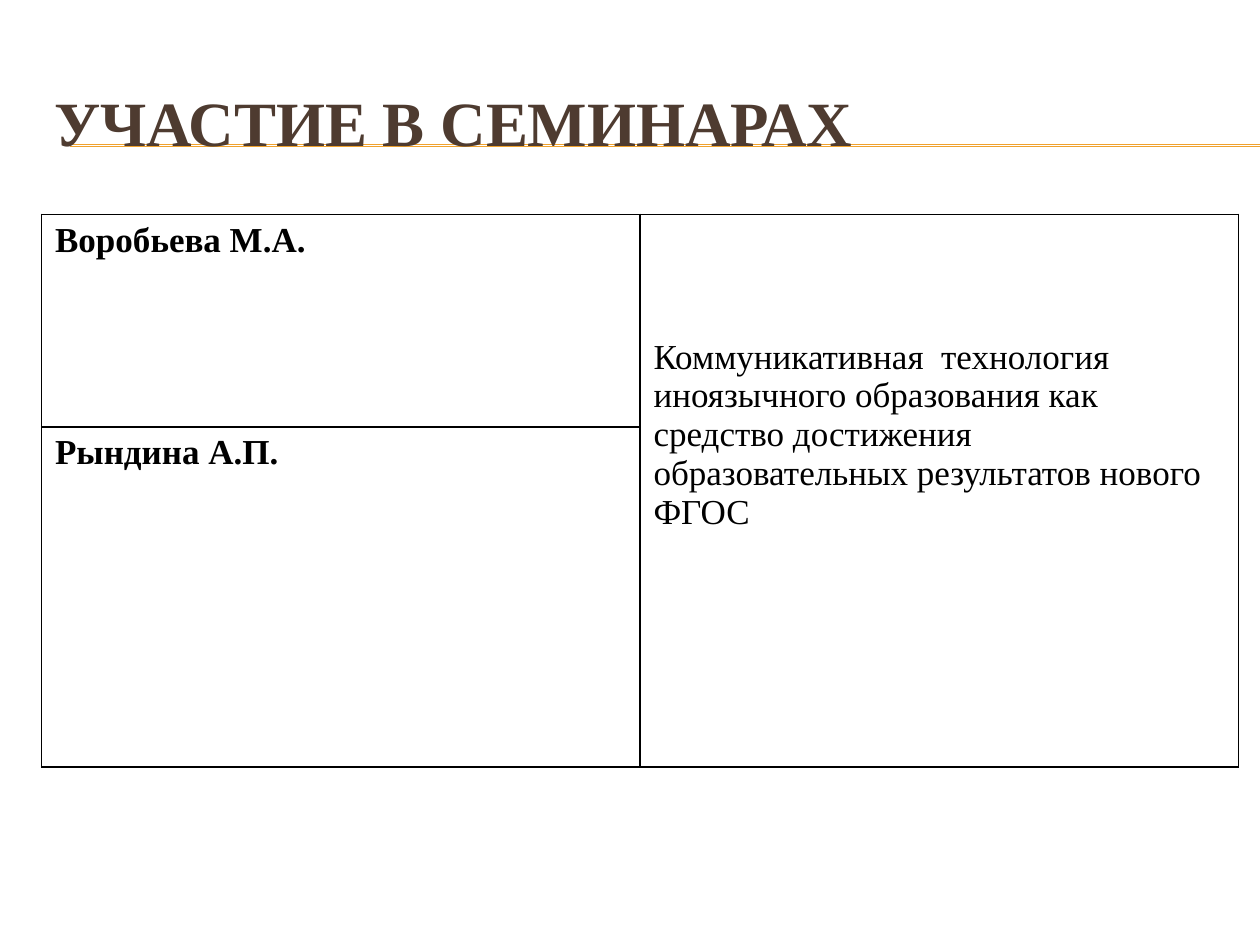
"""Build the slide on seminar participation: a ruled title above a two-column table."""
from lxml import etree
from pptx import Presentation
from pptx.dml.color import RGBColor
from pptx.enum.shapes import MSO_CONNECTOR
from pptx.enum.text import MSO_ANCHOR
from pptx.oxml.ns import qn
from pptx.util import Cm, Pt

STRAIGHT = MSO_CONNECTOR.STRAIGHT
MIDDLE = MSO_ANCHOR.MIDDLE
ORANGE = RGBColor(0xF0, 0xA2, 0x2E)
BROWN = RGBColor(0x4E, 0x3B, 0x30)
BLACK = RGBColor(0x00, 0x00, 0x00)
FONT = "Times New Roman"
LEFT, WIDTH = Cm(0.84), Cm(24.13)


def write(text_frame, text, size, color, bold):
    paragraph = text_frame.paragraphs[0]
    paragraph.text = text
    font = paragraph.font
    font.name, font.size, font.bold = FONT, Pt(size), bold
    font.color.rgb = color


def add_borders(cell):
    properties = cell._tc.get_or_add_tcPr()
    for side in ("a:lnL", "a:lnR", "a:lnT", "a:lnB"):
        border = etree.SubElement(properties, qn(side), w=str(Pt(1)))
        fill = etree.SubElement(border, qn("a:solidFill"))
        etree.SubElement(fill, qn("a:srgbClr"), val=str(BLACK))


presentation = Presentation()
presentation.slide_width, presentation.slide_height = Cm(25.4), Cm(19.05)
slide = presentation.slides.add_slide(presentation.slide_layouts[6])

for top in (Cm(2.92), Cm(2.95)):
    rule = slide.shapes.add_connector(STRAIGHT, Cm(1.42), top, Cm(25.4), top)
    rule.line.color.rgb = ORANGE
    rule.line.width = Pt(0.75)
    etree.SubElement(rule._element.spPr, qn("a:effectLst"))

title = slide.shapes.add_textbox(LEFT, Cm(1.27), WIDTH, Cm(2.34))
title.text_frame.word_wrap = True
title.text_frame.vertical_anchor = MIDDLE
write(title.text_frame, "УЧАСТИЕ В СЕМИНАРАХ", 36, BROWN, True)

table = slide.shapes.add_table(2, 2, LEFT, Cm(4.32), WIDTH, Cm(9.08)).table
table.first_row = table.horz_banding = False
for row, height in zip(table.rows, (4.29, 4.79)):
    row.height = Cm(height)
for cell in table.iter_cells():
    cell.margin_left = cell.margin_right = Cm(0.27)
    cell.margin_top = cell.margin_bottom = Cm(0.13)
    add_borders(cell)
    cell.fill.background()

for row_index, teacher in enumerate(("Воробьева М.А.", "Рындина А.П.")):
    write(table.cell(row_index, 0).text_frame, teacher, 20, BLACK, True)

topic_cell = table.cell(0, 1)
topic_cell.merge(table.cell(1, 1))
topic_cell.margin_top = Cm(2.49)
write(
    topic_cell.text_frame,
    "Коммуникативная  технология иноязычного образования как средство "
    "достижения образовательных результатов нового ФГОС",
    20, BLACK, False,
)

presentation.save("out.pptx")
